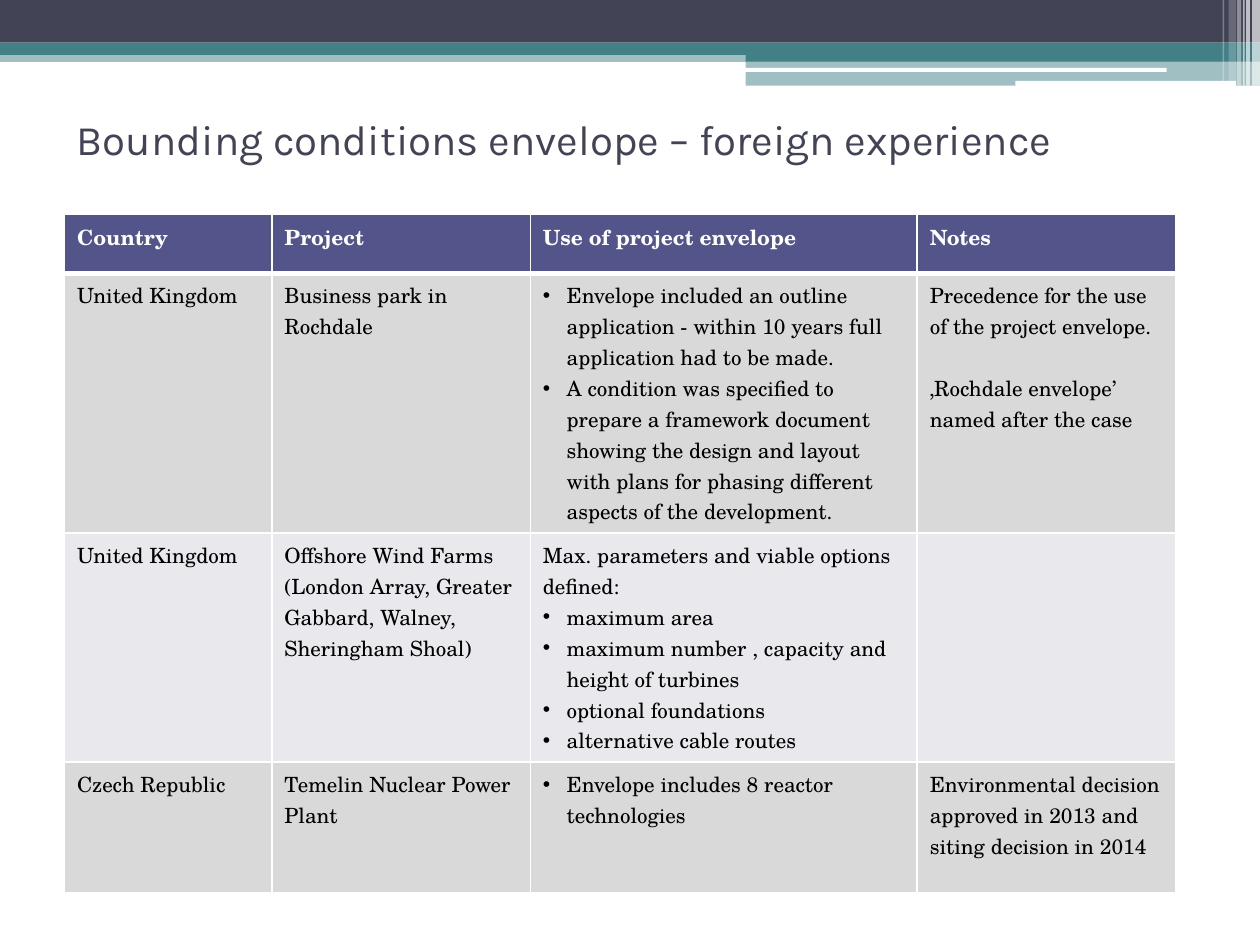
from dataclasses import dataclass

from lxml.etree import SubElement
from pptx import Presentation
from pptx.dml.color import RGBColor
from pptx.enum.shapes import MSO_SHAPE
from pptx.enum.text import MSO_ANCHOR
from pptx.oxml.ns import qn
from pptx.util import Cm, Pt


@dataclass(frozen=True)
class Theme:
    navy: str = "424456"
    teal: str = "438086"
    white: str = "FFFFFF"
    black: str = "000000"
    header: str = "53548A"
    bands: tuple[str, str] = ("D9D9D9", "E9E9ED")
    title_font: str = "Karla"
    table_font: str = "TeX Gyre Schola"
    title_size: int = 24
    table_size: int = 12
    line_gap: float = 17.7


@dataclass(frozen=True)
class Bar:
    left: float
    top: float
    width: float
    height: float
    color: str
    opacity: int = 100
    rounded: bool = False


@dataclass(frozen=True)
class Line:
    text: str
    bullet: bool = False
    gap_before: bool = False


THEME = Theme()
INDENT = Cm(0.48)

# Header bands, white strips over them, then the stripes at the right edge
BARS = [
    Bar(0, 1.02, 25.4, 0.23, THEME.teal, 50),
    Bar(0, 0, 25.4, 0.86, THEME.navy),
    Bar(0, 0.86, 25.4, 0.25, THEME.teal),
    Bar(15.03, 0.99, 10.37, 0.25, THEME.teal),
    Bar(15.03, 1.22, 10.37, 0.51, THEME.teal, 50),
    Bar(15.01, 1.37, 8.51, 0.08, THEME.white, rounded=True),
    Bar(20.47, 1.63, 4.45, 0.1, THEME.white, rounded=True),
] + [
    Bar(left, 0, width, height, THEME.white, opacity)
    for left, width, height, opacity in [
        (25.24, 0.16, 1.73, 65),
        (25.12, 0.08, 1.73, 65),
        (25.06, 0.03, 1.73, 60),
        (24.94, 0.08, 1.73, 40),
        (24.77, 0.15, 1.63, 20),
        (24.65, 0.03, 1.63, 30),
    ]
]

COLUMN_WIDTHS = [4.18, 5.21, 7.8, 5.21]
ROW_HEIGHTS = [1.19, 5, 4.42, 2.64]
ROWS = [
    [[Line(name)] for name in ("Country", "Project", "Use of project envelope", "Notes")],
    [
        [Line("United Kingdom")],
        [Line("Business park in Rochdale")],
        [
            Line("Envelope included an outline application - within 10 years "
                 "full application had to be made.", bullet=True),
            Line("A condition was specified to prepare a framework document "
                 "showing the design and layout with plans for phasing "
                 "different aspects of the development.", bullet=True),
        ],
        [
            Line("Precedence for the use of the project envelope."),
            Line("‚Rochdale envelope’ named after the case", gap_before=True),
        ],
    ],
    [
        [Line("United Kingdom")],
        [Line("Offshore Wind Farms (London Array, Greater Gabbard, Walney, Sheringham Shoal)")],
        [
            Line("Max. parameters and viable options defined:"),
            Line("maximum area", bullet=True),
            Line("maximum number , capacity and height of turbines", bullet=True),
            Line("optional foundations", bullet=True),
            Line("alternative cable routes", bullet=True),
        ],
        [],
    ],
    [
        [Line("Czech Republic")],
        [Line("Temelin Nuclear Power Plant")],
        [Line("Envelope includes 8 reactor technologies", bullet=True)],
        [Line("Environmental decision approved in 2013 and siting decision in 2014")],
    ],
]


def style_font(paragraph, name: str, size: int, color: str, bold: bool = False) -> None:
    font = paragraph.font
    font.name, font.size, font.bold = name, Pt(size), bold
    font.color.rgb = RGBColor.from_string(color)


def draw_bar(page, bar: Bar) -> None:
    kind = MSO_SHAPE.ROUNDED_RECTANGLE if bar.rounded else MSO_SHAPE.RECTANGLE
    shape = page.shapes.add_shape(
        kind, Cm(bar.left), Cm(bar.top), Cm(bar.width), Cm(bar.height))
    shape.shadow.inherit = False
    shape.line.fill.background()
    shape.fill.solid()
    shape.fill.fore_color.rgb = RGBColor.from_string(bar.color)
    if bar.opacity < 100:
        color = shape._element.spPr.find(qn("a:solidFill"))[0]
        SubElement(color, qn("a:alpha"), val=str(bar.opacity * 1000))


def add_bullet(paragraph) -> None:
    properties = paragraph._p.get_or_add_pPr()
    properties.set("marL", str(INDENT))
    properties.set("indent", str(-INDENT))
    SubElement(properties, qn("a:buFont"), typeface="Arial")
    SubElement(properties, qn("a:buChar"), char="•")


def add_border(cell, side: str, points: int) -> None:
    properties = cell._tc.get_or_add_tcPr()
    line = SubElement(properties, qn(f"a:ln{side}"), w=str(Pt(points)))
    fill = SubElement(line, qn("a:solidFill"))
    SubElement(fill, qn("a:srgbClr"), val=THEME.white)


def fill_cell(cell, lines: list[Line], row: int) -> None:
    is_header = row == 0
    for side in "LRTB":
        thick = (is_header and side == "B") or (row == 1 and side == "T")
        add_border(cell, side, 3 if thick else 1)
    cell.fill.solid()
    fill = THEME.header if is_header else THEME.bands[(row - 1) % 2]
    cell.fill.fore_color.rgb = RGBColor.from_string(fill)
    frame = cell.text_frame
    for index, line in enumerate(lines):
        paragraph = frame.add_paragraph() if index else frame.paragraphs[0]
        paragraph.text = line.text
        if line.bullet:
            add_bullet(paragraph)
        if line.gap_before:
            paragraph.space_before = Pt(THEME.line_gap)
        style_font(paragraph, THEME.table_font, THEME.table_size,
                   THEME.white if is_header else THEME.black, is_header)


def draw_table(page) -> None:
    table = page.shapes.add_table(
        len(ROWS), len(COLUMN_WIDTHS), Cm(1.3), Cm(4.32),
        Cm(sum(COLUMN_WIDTHS)), Cm(sum(ROW_HEIGHTS))).table
    for column, width in zip(table.columns, COLUMN_WIDTHS):
        column.width = Cm(width)
    for row, height in zip(table.rows, ROW_HEIGHTS):
        row.height = Cm(height)
    for row_index, row in enumerate(ROWS):
        for column_index, lines in enumerate(row):
            fill_cell(table.cell(row_index, column_index), lines, row_index)


def draw_title(page, text: str) -> None:
    box = page.shapes.add_textbox(Cm(1.3), Cm(1.32), Cm(22.86), Cm(2.97))
    frame = box.text_frame
    frame.word_wrap = True
    frame.vertical_anchor = MSO_ANCHOR.MIDDLE
    paragraph = frame.paragraphs[0]
    paragraph.text = text
    style_font(paragraph, THEME.title_font, THEME.title_size, THEME.navy)


def main() -> None:
    deck = Presentation()
    deck.slide_width, deck.slide_height = Cm(25.4), Cm(19.05)
    page = deck.slides.add_slide(deck.slide_layouts[6])
    for bar in BARS:
        draw_bar(page, bar)
    draw_table(page)
    draw_title(page, "Bounding conditions envelope – foreign experience")
    deck.save("out.pptx")


if __name__ == "__main__":
    main()
